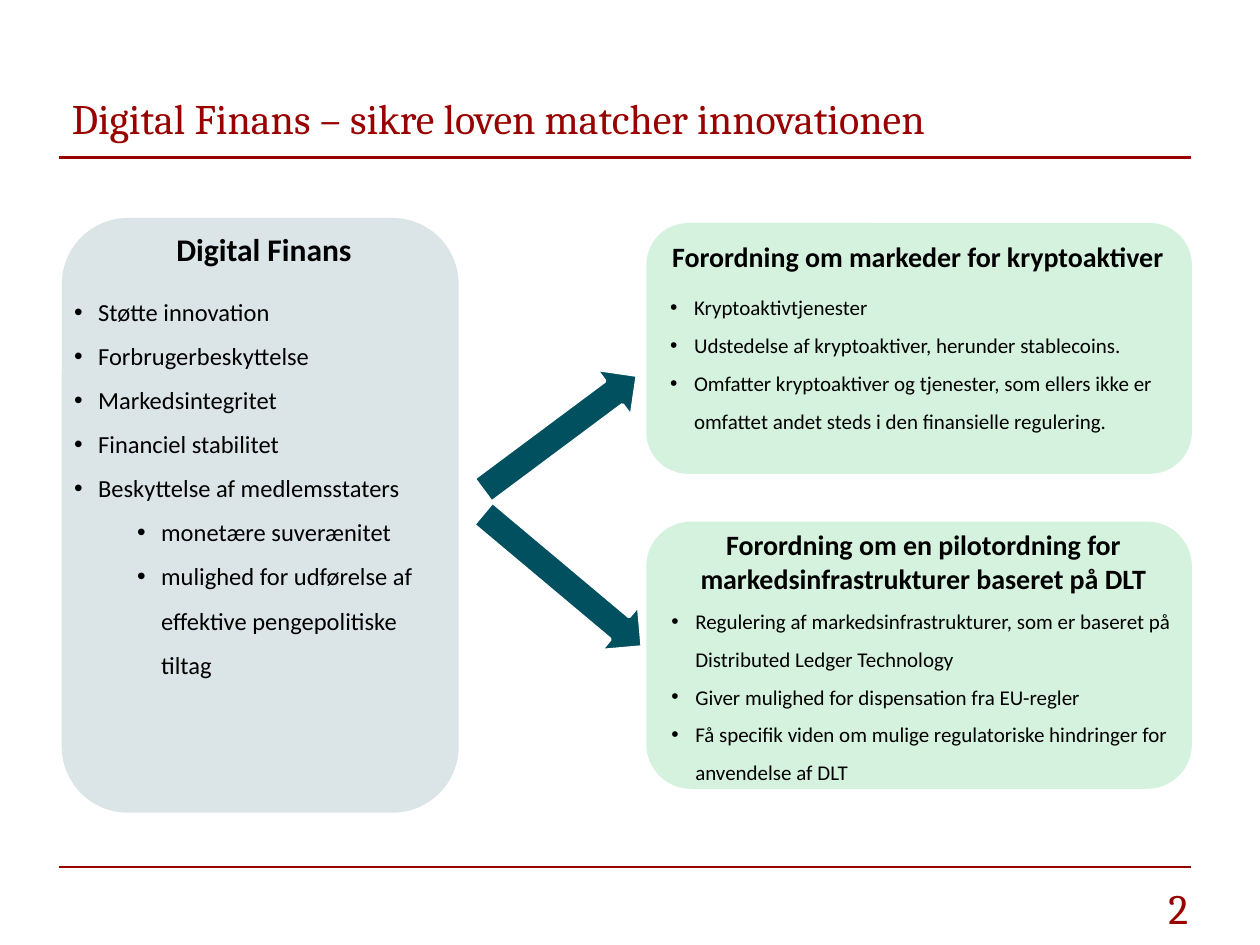
from dataclasses import dataclass

from lxml.etree import SubElement
from pptx import Presentation
from pptx.dml.color import RGBColor
from pptx.enum.shapes import MSO_CONNECTOR as Connector
from pptx.enum.shapes import MSO_SHAPE as Shape
from pptx.enum.text import MSO_ANCHOR as Anchor
from pptx.enum.text import MSO_AUTO_SIZE as AutoSize
from pptx.enum.text import PP_ALIGN as Align
from pptx.oxml.ns import qn
from pptx.util import Inches, Pt

COLORS = {
    "red": "990000",
    "grey": "CDD9DD",
    "green": "C4EDD1",
    "teal": "00505F",
    "white": "FFFFFF",
    "black": "000000",
}


@dataclass
class Box:
    left: float
    top: float
    width: float
    height: float

    def lengths(self) -> list:
        return [Inches(n) for n in (self.left, self.top, self.width, self.height)]


@dataclass
class Item:
    text: str
    level: int = 0


@dataclass
class Topic:
    color: str
    panel: Box
    heading: str
    heading_box: Box
    heading_size: int
    items: list[Item]
    items_box: Box
    items_size: int


@dataclass
class Arrow:
    box: Box
    rotation: float


TOPICS = [
    Topic(
        "grey", Box(0.49, 1.73, 3.15, 4.72),
        "Digital Finans", Box(0.57, 1.78, 3.05, 0.4), 18,
        [
            Item("Støtte innovation"),
            Item("Forbrugerbeskyttelse"),
            Item("Markedsintegritet"),
            Item("Financiel stabilitet"),
            Item("Beskyttelse af medlemsstaters"),
            Item("monetære suverænitet", 1),
            Item("mulighed for udførelse af effektive pengepolitiske tiltag", 1),
        ],
        Box(0.49, 2.19, 3.15, 3.58), 14,
    ),
    Topic(
        "green", Box(5.13, 1.77, 4.33, 1.99),
        "Forordning om markeder for kryptoaktiver", Box(5.2, 1.85, 4.17, 0.37), 16,
        [
            Item("Kryptoaktivtjenester"),
            Item("Udstedelse af kryptoaktiver, herunder stablecoins."),
            Item("Omfatter kryptoaktiver og tjenester, som ellers ikke er "
                 "omfattet andet steds i den finansielle regulering."),
        ],
        Box(5.22, 2.19, 4.31, 1.62), 12,
    ),
    Topic(
        "green", Box(5.13, 4.14, 4.33, 2.12),
        "Forordning om en pilotordning for markedsinfrastrukturer baseret på DLT",
        Box(5.13, 4.14, 4.4, 0.94), 16,
        [
            Item("Regulering af markedsinfrastrukturer, som er baseret på "
                 "Distributed Ledger Technology"),
            Item("Giver mulighed for dispensation fra EU-regler"),
            Item("Få specifik viden om mulige regulatoriske hindringer for "
                 "anvendelse af DLT"),
        ],
        Box(5.23, 4.68, 4.23, 1.91), 12,
    ),
]

ARROWS = [
    Arrow(Box(3.68, 3.2, 1.53, 0.47), 323.3),
    Arrow(Box(3.64, 4.37, 1.65, 0.47), 40),
]


def rgb(name: str) -> RGBColor:
    return RGBColor.from_string(COLORS[name])


def add_run(paragraph, text: str, size: int, color: str = "black",
            font_name: str = "Calibri", bold: bool = False) -> None:
    run = paragraph.add_run()
    run.text = text
    run.font.size = Pt(size)
    run.font.name = font_name
    run.font.bold = bold
    run.font.color.rgb = rgb(color)


def fill_placeholder(placeholder, box: Box, text: str, align: Align, anchor: Anchor) -> None:
    placeholder.left, placeholder.top, placeholder.width, placeholder.height = box.lengths()
    frame = placeholder.text_frame
    frame.auto_size = AutoSize.NONE
    frame.vertical_anchor = anchor
    paragraph = frame.paragraphs[0]
    properties = paragraph._p.get_or_add_pPr()
    properties.set("marL", "0")
    properties.set("indent", "0")
    SubElement(properties, qn("a:buNone"))
    paragraph.alignment = align
    paragraph.space_before = Pt(0)
    add_run(paragraph, text, 24, "red", "Cambria")


def add_rule(slide, top: float) -> None:
    rule = slide.shapes.add_connector(
        Connector.STRAIGHT, Inches(0.47), Inches(top), Inches(9.45), Inches(top))
    rule.line.color.rgb = rgb("red")
    rule.line.width = Pt(1.25)
    SubElement(rule._element.spPr, qn("a:effectLst"))


def add_panel(slide, box: Box, color: str) -> None:
    panel = slide.shapes.add_shape(Shape.ROUNDED_RECTANGLE, *box.lengths())
    panel.shadow.inherit = False
    panel.fill.solid()
    panel.fill.fore_color.rgb = rgb(color)
    panel.line.fill.background()
    fill_color = panel._element.spPr.find(qn("a:solidFill"))[0]
    SubElement(fill_color, qn("a:alpha"), val="70000")


def add_text_frame(slide, box: Box):
    frame = slide.shapes.add_textbox(*box.lengths()).text_frame
    frame.word_wrap = True
    return frame


def add_heading(slide, topic: Topic) -> None:
    paragraph = add_text_frame(slide, topic.heading_box).paragraphs[0]
    paragraph.alignment = Align.CENTER
    add_run(paragraph, topic.heading, topic.heading_size, bold=True)


def add_list(slide, topic: Topic) -> None:
    frame = add_text_frame(slide, topic.items_box)
    for index, item in enumerate(topic.items):
        paragraph = frame.add_paragraph() if index else frame.paragraphs[0]
        properties = paragraph._p.get_or_add_pPr()
        properties.set("marL", str(Inches(0.19 + 0.5 * item.level)))
        properties.set("indent", str(Inches(-0.19)))
        SubElement(properties, qn("a:buFont"), typeface="Arial")
        SubElement(properties, qn("a:buChar"), char="•")
        paragraph.level = item.level
        paragraph.line_spacing = 1.5
        add_run(paragraph, item.text, topic.items_size)


def add_arrow(slide, arrow: Arrow) -> None:
    shape = slide.shapes.add_shape(Shape.RIGHT_ARROW, *arrow.box.lengths())
    shape.rotation = arrow.rotation
    shape.shadow.inherit = False
    shape.fill.solid()
    shape.fill.fore_color.rgb = rgb("teal")
    shape.line.color.rgb = rgb("white")
    shape.line.width = Pt(2)


def main() -> None:
    presentation = Presentation()
    presentation.slide_width = Inches(10)
    presentation.slide_height = Inches(7.5)
    slide = presentation.slides.add_slide(presentation.slide_layouts[1])
    fill_placeholder(slide.shapes.title, Box(0.47, 0.59, 9, 0.69),
                     "Digital Finans – sikre loven matcher innovationen",
                     Align.LEFT, Anchor.MIDDLE)
    fill_placeholder(slide.placeholders[1], Box(0.47, 6.95, 9.06, 0.47),
                     "2", Align.RIGHT, Anchor.TOP)
    for top in (1.25, 6.88):
        add_rule(slide, top)
    for topic in TOPICS:
        add_panel(slide, topic.panel, topic.color)
        add_heading(slide, topic)
        add_list(slide, topic)
    for arrow in ARROWS:
        add_arrow(slide, arrow)
    presentation.save("out.pptx")


if __name__ == "__main__":
    main()
